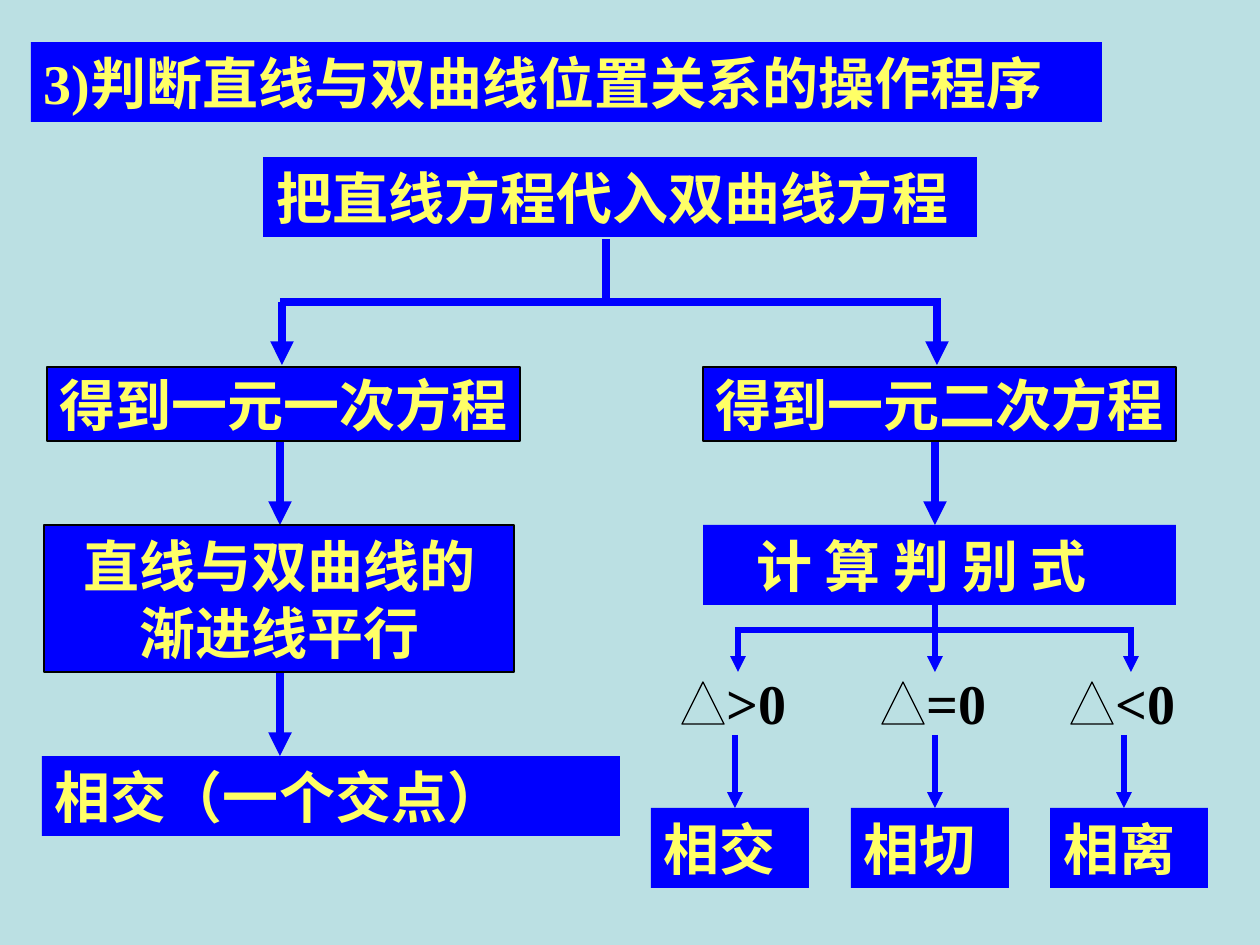
from dataclasses import dataclass

import pptx
import pptx.dml.color
import pptx.enum.shapes
import pptx.enum.text
import pptx.oxml
import pptx.oxml.ns
import pptx.util

RGBColor = pptx.dml.color.RGBColor
ShapeKind = pptx.enum.shapes.MSO_SHAPE
Anchor = pptx.enum.text.MSO_ANCHOR
Align = pptx.enum.text.PP_ALIGN

BACKGROUND = RGBColor(0xBB, 0xE0, 0xE3)
BLUE = RGBColor(0x00, 0x00, 0xFF)
YELLOW = RGBColor(0xFF, 0xFF, 0x66)
BLACK = RGBColor(0x00, 0x00, 0x00)

PX_PER_INCH = 126
FONT = "Times New Roman"
FONT_SIZE = 32
INSET = 13
ROW_HEIGHT = 80
THICK, THIN = 4.5, 3


def px(length: int) -> int:
    return round(length * 914400 / PX_PER_INCH)


@dataclass
class Box:
    left: int
    top: int
    width: int
    lines: tuple[str, ...]
    height: int = ROW_HEIGHT
    framed: bool = False  # outlined, with centred text
    indent: int = 0


@dataclass
class Link:
    x1: int
    y1: int
    x2: int
    y2: int
    weight: float = THICK
    arrow: bool = True


@dataclass
class Case:
    condition: str
    result: str
    triangle_left: int
    label_width: int
    branch_x: int
    arrow_x: int
    result_left: int


def write_lines(shape, lines: tuple[str, ...], color: RGBColor, centred: bool = False,
                indent: int = 0) -> None:
    frame = shape.text_frame
    frame.word_wrap = not centred
    frame.vertical_anchor = Anchor.MIDDLE if centred else Anchor.TOP
    frame.margin_left = px(INSET + indent)
    for index, line in enumerate(lines):
        paragraph = frame.paragraphs[0] if index == 0 else frame.add_paragraph()
        paragraph.alignment = Align.CENTER if centred else Align.LEFT
        run = paragraph.add_run()
        run.text = line
        run.font.name = FONT
        run.font.size = pptx.util.Pt(FONT_SIZE)
        run.font.bold = True
        run.font.color.rgb = color


def draw_shape(slide, kind, left: int, top: int, width: int, height: int,
               fill: RGBColor, outlined: bool):
    shape = slide.shapes.add_shape(kind, px(left), px(top), px(width), px(height))
    shape.shadow.inherit = False
    shape.fill.solid()
    shape.fill.fore_color.rgb = fill
    if outlined:
        shape.line.color.rgb = BLACK
        shape.line.width = pptx.util.Pt(0.75)
    else:
        shape.line.fill.background()
    return shape


def draw_box(slide, box: Box) -> None:
    shape = draw_shape(slide, ShapeKind.RECTANGLE, box.left, box.top, box.width,
                       box.height, BLUE, box.framed)
    write_lines(shape, box.lines, YELLOW, box.framed, box.indent)


def draw_link(slide, link: Link) -> None:
    connector = slide.shapes.add_connector(
        pptx.enum.shapes.MSO_CONNECTOR.STRAIGHT,
        px(link.x1), px(link.y1), px(link.x2), px(link.y2))
    connector.line.color.rgb = BLUE
    connector.line.width = pptx.util.Pt(link.weight)
    if link.arrow:
        tail = pptx.oxml.parse_xml(
            f'<a:tailEnd {pptx.oxml.ns.nsdecls("a")} type="triangle"/>')
        connector.line._get_or_add_ln().append(tail)
    connector._element.spPr.append(
        pptx.oxml.parse_xml(f'<a:effectLst {pptx.oxml.ns.nsdecls("a")}/>'))


def draw_case(slide, case: Case) -> None:
    draw_link(slide, Link(case.branch_x, 630, case.branch_x, 672, THIN))
    draw_shape(slide, ShapeKind.ISOSCELES_TRIANGLE, case.triangle_left, 682, 42, 42,
               BACKGROUND, True)
    label = slide.shapes.add_textbox(px(case.triangle_left + 32), px(662),
                                     px(case.label_width), px(ROW_HEIGHT))
    write_lines(label, (case.condition,), BLACK)
    draw_box(slide, Box(case.result_left, 808, 158, (case.result,)))
    draw_link(slide, Link(case.arrow_x, 735, case.arrow_x, 808, THIN))


BOXES = [
    Box(31, 42, 1071, ("3)判断直线与双曲线位置关系的操作程序",)),
    Box(263, 157, 714, ("把直线方程代入双曲线方程",)),
    Box(47, 367, 473, ("得到一元一次方程",), 74, framed=True),
    Box(703, 367, 473, ("得到一元二次方程",), 74, framed=True),
    Box(44, 525, 470, ("直线与双曲线的", "渐进线平行"), 147, framed=True),
    Box(42, 756, 578, ("相交（一个交点）",)),
    Box(703, 525, 473, ("计 算 判 别 式",), indent=40),
]

LINKS = [
    # Split into the two kinds of equation
    Link(606, 239, 606, 302, arrow=False),
    Link(280, 302, 941, 302, arrow=False),
    Link(282, 302, 282, 365),
    Link(937, 302, 937, 365),
    # Steps down each side
    Link(280, 441, 280, 525),
    Link(280, 672, 280, 756),
    Link(935, 441, 935, 525),
    # Split by discriminant
    Link(935, 599, 935, 630, THIN, arrow=False),
    Link(735, 630, 1134, 630, THIN, arrow=False),
]

CASES = [
    Case(">0", "相交", 682, 105, 738, 735, 651),
    Case("=0", "相切", 882, 116, 935, 935, 851),
    Case("<0", "相离", 1071, 95, 1131, 1124, 1050),
]


def main() -> None:
    presentation = pptx.Presentation()
    presentation.slide_width = px(1260)
    presentation.slide_height = px(945)
    slide = presentation.slides.add_slide(presentation.slide_layouts[6])
    slide.background.fill.solid()
    slide.background.fill.fore_color.rgb = BACKGROUND

    # Links go behind the boxes they join
    for link in LINKS:
        draw_link(slide, link)
    for box in BOXES:
        draw_box(slide, box)
    for case in CASES:
        draw_case(slide, case)

    presentation.save("out.pptx")


if __name__ == "__main__":
    main()
